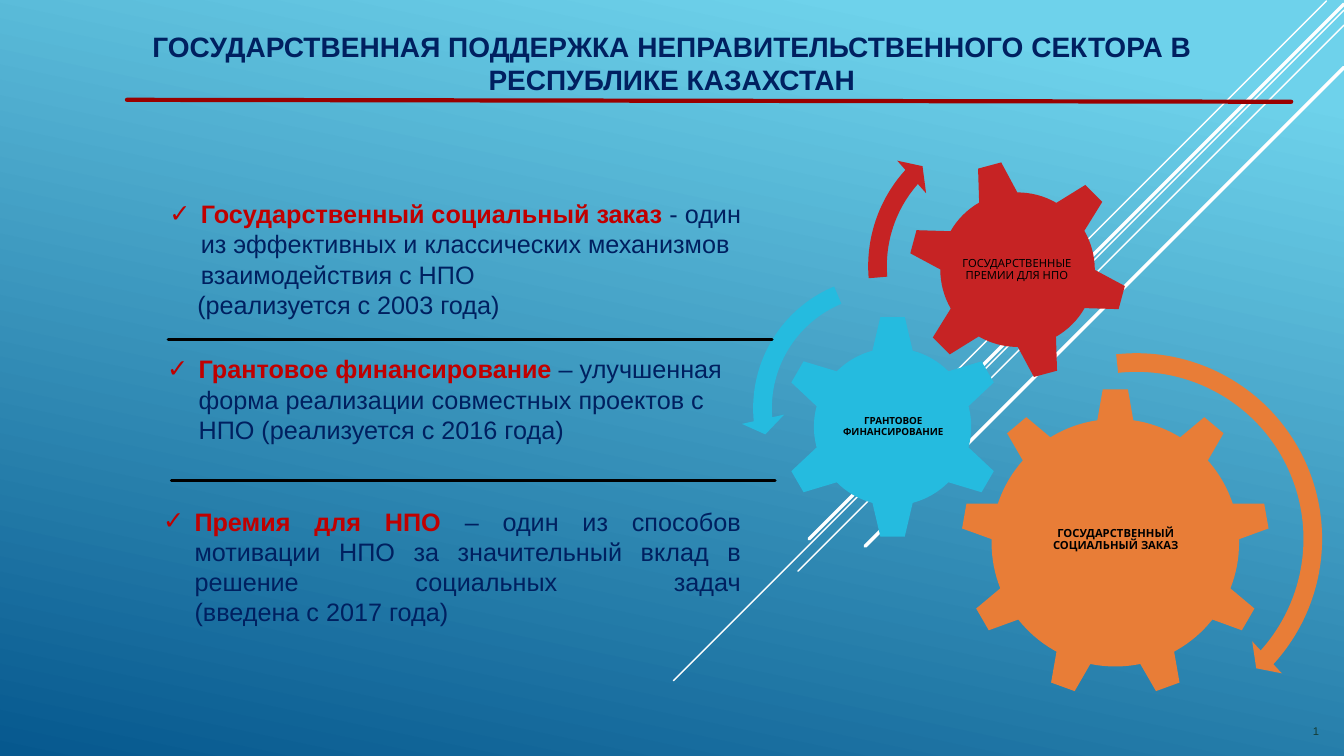
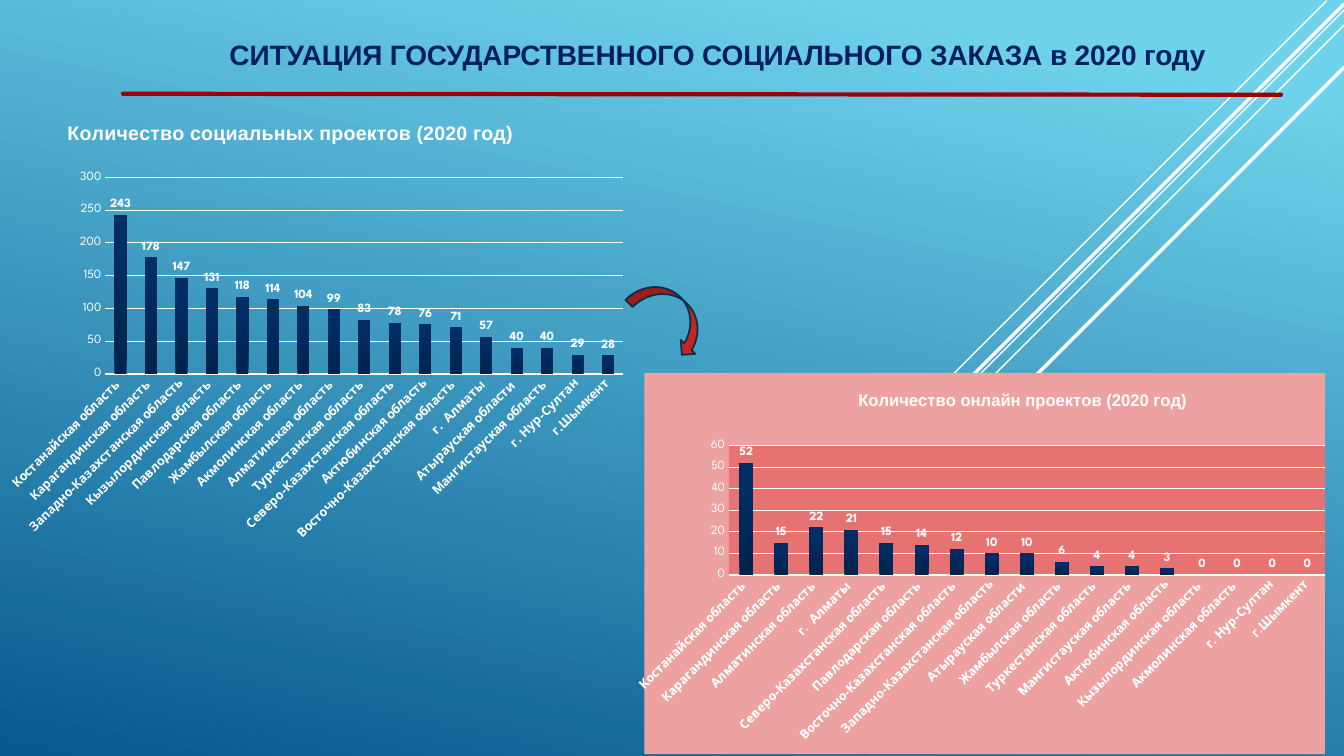
import pptx
import pptx.chart.data
import pptx.dml.color
import pptx.enum.chart
import pptx.enum.shapes
import pptx.enum.text
import pptx.oxml
import pptx.oxml.ns
import pptx.util

Pt = pptx.util.Pt
qn = pptx.oxml.ns.qn
SHAPE = pptx.enum.shapes.MSO_SHAPE
ALIGN = pptx.enum.text.PP_ALIGN
ANCHOR = pptx.enum.text.MSO_ANCHOR

BODY_FONT, ACCENT_FONT = "Arial", "League Spartan"
SKY, DEEP_BLUE = "6ED2EB", "06588E"
NAVY, DARK_RED, TERM_RED = "002060", "990000", "C00000"
WHITE, BLACK = "FFFFFF", "000000"
ORANGE, CYAN, RED = "E87D37", "25BBDF", "C62324"

# Diagonal rays at 45 degrees: start x, start y, run, line width
RAYS = [(947.5, 0.7, 299.5, 1), (960, 7.2, 479, 1), (960, 18, 390, 1),
        (960, 2.9, 382, 2.5), (960, 48.2, 342, 2.5)]

# Gear shape, box, rotation, colour, label, label box, label size, bold
GEARS = [
    (SHAPE.GEAR_9, (686.2, 277.2, 221, 221), 0, ORANGE,
     "ГОСУДАРСТВЕННЫЙ СОЦИАЛЬНЫЙ ЗАКАЗ", (730.8, 329, 132.5, 113.8), 8, True),
    (SHAPE.GEAR_6, (557.3, 224.6, 160.6, 160.6), 0, CYAN,
     "ГРАНТОВОЕ ФИНАНСИРОВАНИЕ", (598, 265.4, 80, 79.2), 7, True),
    (SHAPE.GEAR_6, (648, 113.8, 157.7, 157.7), 345, RED,
     "ГОСУДАРСТВЕННЫЕ ПРЕМИИ ДЛЯ НПО", (682.1, 148.3, 88.6, 88.6), 8, False),
]
# Arrow shape, box, colour, adjustments
TURNS = [
    (SHAPE.CIRCULAR_ARROW, (670.3, 243.4, 283, 283), ORANGE,
     (0.047, 2.99, 25.343, 158.227, 0.055)),
    (SHAPE.LEFT_CIRCULAR_ARROW, (529.2, 188.6, 206, 206), CYAN,
     (0.065, 4.3, 104.891, 148.378, 0.075)),
    (SHAPE.CIRCULAR_ARROW, (611.3, 79.2, 221.8, 221.8), RED,
     (0.06, 3.941, 133.138, 105.082, 0.07)),
]
# Box, alignment, term, explanation
MECHANISMS = [
    ((113.8, 138.2, 426.2, 94.3), ALIGN.LEFT, "Государственный социальный заказ ",
     "- один из эффективных и классических механизмов взаимодействия с НПО"),
    ((112.3, 249.1, 439.2, 94.3), ALIGN.LEFT, "Грантовое финансирование ",
     "– улучшенная форма реализации совместных проектов с НПО "
     "(реализуется с 2016 года)"),
    ((109.4, 357.8, 427, 94.3), ALIGN.JUSTIFY, "Премия для НПО ",
     "– один из способов мотивации НПО за значительный вклад в решение "
     "социальных задач\n(введена с 2017 года)"),
]

SOCIAL_PROJECTS = {
    "Костанайская область ": 243, "Карагандинская область ": 178,
    "Западно-Казахстанская область": 147, "Кызылординская область ": 131,
    "Павлодарская область ": 118, "Жамбылская область ": 114,
    "Акмолинская область ": 104, "Алматинская область ": 99,
    "Туркестанская область ": 83, " Северо-Казахстанская область ": 78,
    "Актюбинская область": 76, "Восточно-Казахстанская область ": 71,
    "г.  Алматы ": 57, "Атырауская области ": 40, "Мангистауская область ": 40,
    " г. Нур-Султан": 29, "г.Шымкент": 28,
}
ONLINE_PROJECTS = {
    "Костанайская область ": 52, "Карагандинская область ": 15,
    "Алматинская область ": 22, "г.  Алматы ": 21,
    " Северо-Казахстанская область ": 15, "Павлодарская область ": 14,
    "Восточно-Казахстанская область ": 12, "Западно-Казахстанская область": 10,
    "Атырауская области ": 10, "Жамбылская область ": 6,
    "Туркестанская область ": 4, "Мангистауская область ": 4,
    "Актюбинская область": 3, "Кызылординская область ": 0,
    "Акмолинская область ": 0, " г. Нур-Султан": 0, "г.Шымкент": 0,
}


def rgb(color):
    return pptx.dml.color.RGBColor.from_string(color)


def points(values):
    return [Pt(value) for value in values]


def set_gradient(fill, angle, *stops):
    """Fill with two (position, colour) stops; angle is counter-clockwise."""
    fill.gradient()
    fill.gradient_angle = angle
    for stop, (position, color) in zip(fill.gradient_stops, stops):
        stop.position = position
        stop.color.rgb = rgb(color)


def set_font(font, size, color, bold=False, name=BODY_FONT):
    font.size, font.bold, font.name = Pt(size), bold, name
    font.color.rgb = rgb(color)


def write(paragraph, text, spacing=0, **font_format):
    """Append text to a paragraph; a newline becomes a line break."""
    for index, line in enumerate(text.split("\n")):
        if index:
            paragraph.add_line_break()
        run = paragraph.add_run()
        run.text = line
        set_font(run.font, **font_format)
        if spacing:
            run._r.get_or_add_rPr().set("spc", str(round(spacing * 100)))


def add_text_frame(slide, box, inset=None, anchor=ANCHOR.TOP):
    frame = slide.shapes.add_textbox(*points(box)).text_frame
    frame.word_wrap = True
    frame.vertical_anchor = anchor
    if inset is not None:
        frame.margin_left = frame.margin_right = Pt(inset)
        frame.margin_top = frame.margin_bottom = Pt(inset)
    return frame


def add_label(slide, text, box, inset=None, anchor=ANCHOR.TOP,
              align=ALIGN.CENTER, line_spacing=None, **text_format):
    paragraph = add_text_frame(slide, box, inset, anchor).paragraphs[0]
    paragraph.alignment = align
    paragraph.line_spacing = line_spacing
    write(paragraph, text, **text_format)


def add_line(slide, begin, end, color, width, cap="flat"):
    connector = slide.shapes.add_connector(
        pptx.enum.shapes.MSO_CONNECTOR.STRAIGHT, *points(begin + end))
    connector.line.color.rgb = rgb(color)
    connector.line.width = Pt(width)
    properties = connector.element.spPr
    properties.find(qn("a:ln")).set("cap", cap)
    properties.append(pptx.oxml.parse_xml(
        f'<a:effectLst {pptx.oxml.ns.nsdecls("a")}/>'))


def add_shape(slide, kind, box, color, rotation=0, adjustments=()):
    shape = slide.shapes.add_shape(kind, *points(box))
    shape.shadow.inherit = False
    shape.rotation = rotation
    shape.fill.solid()
    shape.fill.fore_color.rgb = rgb(color)
    shape.line.fill.background()
    for index, value in enumerate(adjustments):
        shape.adjustments[index] = value
    return shape


def set_bullet(paragraph, character, indent):
    properties = paragraph._p.get_or_add_pPr()
    properties.set("marL", str(Pt(indent)))
    properties.set("indent", str(-Pt(indent)))
    for tag in (f'buFont {{}} typeface="{BODY_FONT}"', f'buChar {{}} char="{character}"'):
        properties.append(pptx.oxml.parse_xml(
            f'<a:{tag.format(pptx.oxml.ns.nsdecls("a"))}/>'))


def add_mechanism(slide, box, align, term, explanation):
    frame = add_text_frame(slide, box)
    paragraph = frame.paragraphs[0]
    paragraph.alignment = align
    set_bullet(paragraph, "✓", 22.5)
    write(paragraph, term, size=18, color=TERM_RED, bold=True)
    write(paragraph, explanation, size=18, color=NAVY)
    return frame


def set_layout(parent, index, **fractions):
    """Place a chart part by fractions of the chart's size."""
    existing = parent.find(qn("c:layout"))
    if existing is not None:
        parent.remove(existing)
    modes = "".join(f'<c:{axis}Mode val="edge"/>' for axis in "xy")
    target = '<c:layoutTarget val="inner"/>' if "w" in fractions else ""
    places = "".join(f'<c:{key} val="{value}"/>' for key, value in fractions.items())
    parent.insert(index, pptx.oxml.parse_xml(
        f'<c:layout {pptx.oxml.ns.nsdecls("c")}><c:manualLayout>'
        f'{target}{modes}{places}</c:manualLayout></c:layout>'))


def area_format(color):
    fill = (f'<a:solidFill><a:srgbClr val="{color}"/></a:solidFill>'
            if color else "<a:noFill/>")
    return pptx.oxml.parse_xml(
        f'<c:spPr {pptx.oxml.ns.nsdecls("c", "a")}>{fill}'
        '<a:ln><a:noFill/></a:ln></c:spPr>')


def add_column_chart(slide, box, values, title, title_size, title_place,
                     plot_place, maximum, step, fill=None, plot_fill=None):
    data = pptx.chart.data.CategoryChartData(number_format="0")
    data.categories = list(values)
    data.add_series("Series 1", list(values.values()))
    chart = slide.shapes.add_chart(
        pptx.enum.chart.XL_CHART_TYPE.COLUMN_CLUSTERED, *points(box), data).chart
    set_font(chart.font, 10, WHITE, name=ACCENT_FONT)
    chart.has_legend = False
    write(chart.chart_title.text_frame.paragraphs[0], title,
          size=title_size, color=WHITE, bold=True)

    plot = chart.plots[0]
    plot.gap_width = 150
    plot.vary_by_categories = False
    set_gradient(plot.series[0].format.fill, 90, (0, "00234C"), (0.8, "002D63"))
    plot.has_data_labels = True
    plot.data_labels.show_value = True
    plot.data_labels.position = pptx.enum.chart.XL_LABEL_POSITION.OUTSIDE_END
    set_font(plot.data_labels.font, 9, WHITE, True, ACCENT_FONT)

    for axis, bold in ((chart.category_axis, True), (chart.value_axis, False)):
        axis.major_tick_mark = pptx.enum.chart.XL_TICK_MARK.NONE
        axis.minor_tick_mark = pptx.enum.chart.XL_TICK_MARK.NONE
        set_font(axis.tick_labels.font, 9, WHITE, bold, ACCENT_FONT)
    chart.category_axis.format.line.color.rgb = rgb(WHITE)
    chart.category_axis.format.line.width = Pt(1)
    chart.value_axis.format.line.fill.background()
    chart.value_axis.minimum_scale = 0
    chart.value_axis.maximum_scale = maximum
    chart.value_axis.major_unit = step
    grid = chart.value_axis.major_gridlines.format.line
    grid.color.rgb = rgb(WHITE)
    grid.width = Pt(0.75)

    root = chart.element.find(qn("c:chart"))
    plot_area = root.find(qn("c:plotArea"))
    category_text = plot_area.find(qn("c:catAx")).find(qn("c:txPr"))
    category_text.find(qn("a:bodyPr")).set("rot", "-2700000")
    set_layout(root.find(qn("c:title")), 1, **title_place)
    set_layout(plot_area, 0, **plot_place)
    plot_area.append(area_format(plot_fill))
    root.addnext(area_format(fill))


def add_slide(presentation, rule_begin, rule_end):
    """Add a slide with the diagonal rays and the rule under its title."""
    slide = presentation.slides.add_slide(presentation.slide_layouts[6])
    for left, top, run, width in RAYS:
        add_line(slide, (left, top), (left - run, top + run), WHITE, width, "rnd")
    add_line(slide, rule_begin, rule_end, DARK_RED, 3, "rnd")
    return slide


def build_support_slide(presentation):
    slide = add_slide(presentation, (90.7, 71.3), (922.3, 72.7))
    add_label(slide, "ГОСУДАРСТВЕННАЯ ПОДДЕРЖКА НЕПРАВИТЕЛЬСТВЕННОГО СЕКТОРА В "
              "РЕСПУБЛИКЕ КАЗАХСТАН", (52.6, 17.3, 854.6, 55.4),
              size=20, color=NAVY, bold=True)
    add_label(slide, "1", (930.6, 514, 24, 17.3), align=ALIGN.LEFT,
              size=8, color="143B33")
    for kind, box, rotation, color, label, label_box, size, bold in GEARS:
        add_shape(slide, kind, box, color, rotation)
        add_label(slide, label, label_box, inset=0.7, anchor=ANCHOR.MIDDLE,
                  line_spacing=0.9, size=size, color=BLACK, bold=bold,
                  name=ACCENT_FONT)
    for kind, box, color, adjustments in TURNS:
        add_shape(slide, kind, box, color, adjustments=adjustments)

    frames = [add_mechanism(slide, *mechanism) for mechanism in MECHANISMS]
    since = frames[0].add_paragraph()
    since._p.get_or_add_pPr().set("marL", str(Pt(20)))
    write(since, "(реализуется с 2003 года)", size=18, color=NAVY)
    for left, top in ((120.2, 242.3), (122.4, 343.4)):
        add_line(slide, (left, top), (left + 431.3, top), BLACK, 2.25, "rnd")


def build_projects_slide(presentation):
    slide = add_slide(presentation, (87.8, 67), (915, 67.7))
    add_label(slide, "СИТУАЦИЯ ГОСУДАРСТВЕННОГО СОЦИАЛЬНОГО ЗАКАЗА в 2020 году",
              (96.5, 27, 831.6, 25.2), inset=0, size=20, color="001F5F",
              bold=True, spacing=-0.1)
    add_column_chart(
        slide, (0, 83.5, 455.8, 309.6), SOCIAL_PROJECTS,
        "Количество социальных проектов (2020 год)", 14, dict(x=0.1, y=0),
        dict(x=0.165, y=0.14, w=0.812, h=0.453), 300, 50)
    add_column_chart(
        slide, (455.8, 266.4, 491, 272.2), ONLINE_PROJECTS,
        "Количество онлайн проектов (2020 год)", 12, dict(x=0.31, y=0.035),
        dict(x=0.129, y=0.191, w=0.876, h=0.339), 60, 10,
        fill="EEA1A1", plot_fill="E67272")
    arrow = add_shape(slide, SHAPE.CURVED_DOWN_ARROW, (447.8, 211.7, 63.4, 28.8),
                      RED, 44.2)
    arrow.line.color.rgb = rgb("043148")
    arrow.line.width = Pt(1.25)


def main():
    presentation = pptx.Presentation()
    presentation.slide_width, presentation.slide_height = points((960, 540))
    set_gradient(presentation.slide_master.background.fill, 258,
                 (0.1, SKY), (1, DEEP_BLUE))
    build_support_slide(presentation)
    build_projects_slide(presentation)
    presentation.save("out.pptx")


if __name__ == "__main__":
    main()
